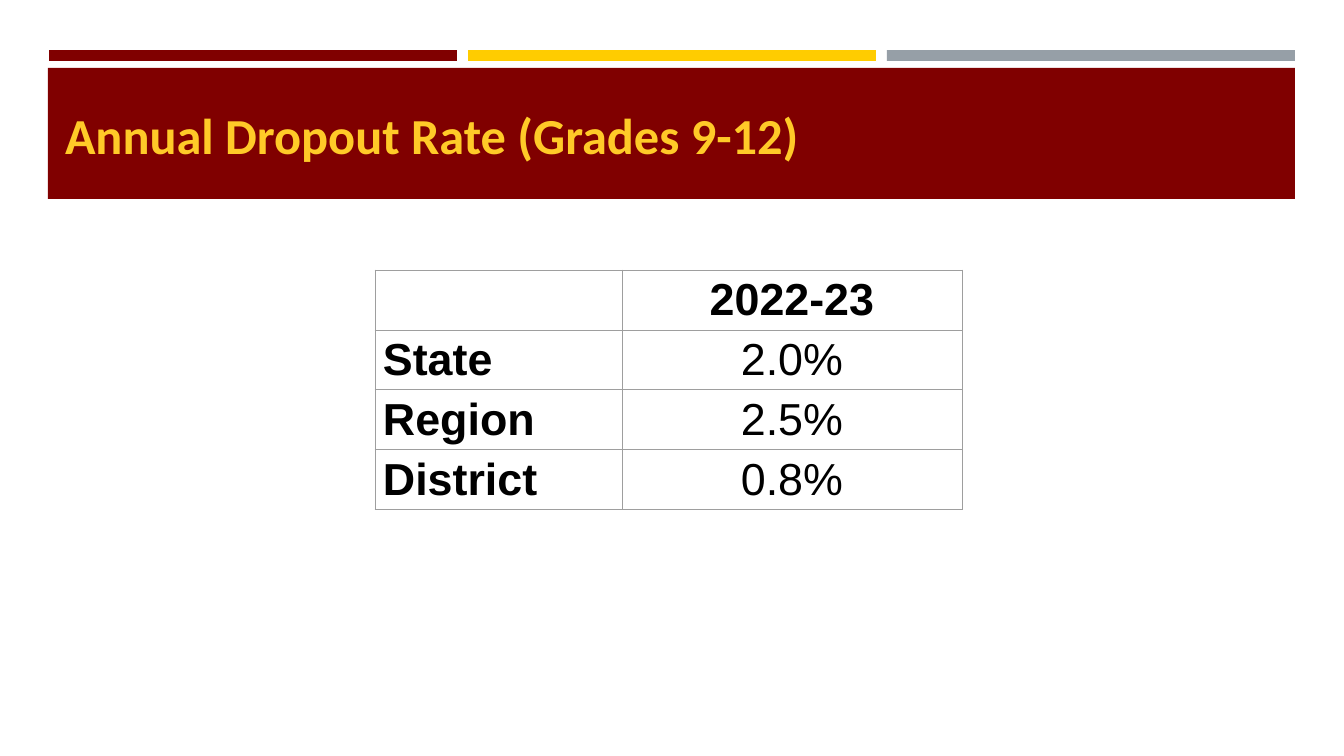
from pptx import Presentation
from pptx.dml.color import RGBColor as Rgb
from pptx.enum.shapes import MSO_SHAPE as Shape
from pptx.enum.text import MSO_ANCHOR as Anchor, PP_ALIGN as Align
from pptx.oxml import parse_xml
from pptx.oxml.ns import nsdecls
from pptx.util import Pt

SCALE = 914400 / 100.8
COLORS = {
    "maroon": "800000",
    "yellow": "FFCC00",
    "gray": "969FA7",
    "gold": "FFCA28",
    "black": "000000",
    "border": "9E9E9E",
}
ROWS = [
    ("", "2022-23"),
    ("State", "2.0%"),
    ("Region", "2.5%"),
    ("District", "0.8%"),
]
WIDTHS = (247, 340)
HEIGHT = 60


def px(n):
    return round(n * SCALE)


def color(name):
    return Rgb.from_string(COLORS[name])


def style(font, face, size, name, bold):
    font.name = face
    font.size = Pt(size)
    font.color.rgb = color(name)
    font.bold = bold


def add_bar(slide, box, name):
    bar = slide.shapes.add_shape(Shape.RECTANGLE, *map(px, box))
    bar.shadow.inherit = False
    bar.fill.solid()
    bar.fill.fore_color.rgb = color(name)
    bar.line.fill.background()
    return bar


def set_title(slide, text, box, band):
    title = slide.shapes.title
    band.element.addnext(title.element)
    title.left, title.top, title.width, title.height = map(px, box)
    frame = title.text_frame
    frame.text = text
    frame.word_wrap = True
    frame.vertical_anchor = Anchor.MIDDLE
    frame.margin_left = frame.margin_right = 0
    frame.margin_top = frame.margin_bottom = 0
    line = frame.paragraphs[0]
    line.alignment = Align.LEFT
    style(line.font, "Calibri", 36, "gold", True)


def set_border(cell):
    props = cell._tc.get_or_add_tcPr()
    for i, side in enumerate(("lnL", "lnR", "lnT", "lnB")):
        props.insert(i, parse_xml(
            f'<a:{side} {nsdecls("a")} w="{Pt(0.75)}"><a:solidFill>'
            f'<a:srgbClr val="{COLORS["border"]}"/></a:solidFill></a:{side}>'))


def set_cell(cell, text, bold, align):
    cell.fill.background()
    set_border(cell)
    cell.margin_left = cell.margin_right = px(8)
    cell.margin_top = cell.margin_bottom = px(4)
    cell.vertical_anchor = Anchor.MIDDLE
    cell.text = text
    line = cell.text_frame.paragraphs[0]
    line.alignment = align
    style(line.font, "Arial", 32, "black", bold)


def add_rates(slide, left, top):
    box = (left, top, sum(WIDTHS), HEIGHT * len(ROWS))
    frame = slide.shapes.add_table(len(ROWS), len(WIDTHS), *map(px, box))
    table = frame.table
    table.first_row = table.horz_banding = False
    for col, width in zip(table.columns, WIDTHS):
        col.width = px(width)
    for r, row in enumerate(ROWS):
        table.rows[r].height = px(HEIGHT)
        for c, text in enumerate(row):
            align = Align.CENTER if c else Align.LEFT
            set_cell(table.cell(r, c), text, r == 0 or c == 0, align)


def main():
    deck = Presentation()
    deck.slide_width, deck.slide_height = px(1344), px(756)
    slide = deck.slides.add_slide(deck.slide_layouts[5])
    for i, name in enumerate(("maroon", "yellow", "gray")):
        add_bar(slide, (49 + 419 * i, 50, 408, 11), name)
    band = add_bar(slide, (48, 68, 1247, 131), "maroon")
    set_title(slide, "Annual Dropout Rate (Grades 9-12)",
              (65, 78, 1216, 112), band)
    add_rates(slide, 375, 270)
    deck.save("out.pptx")


if __name__ == "__main__":
    main()
